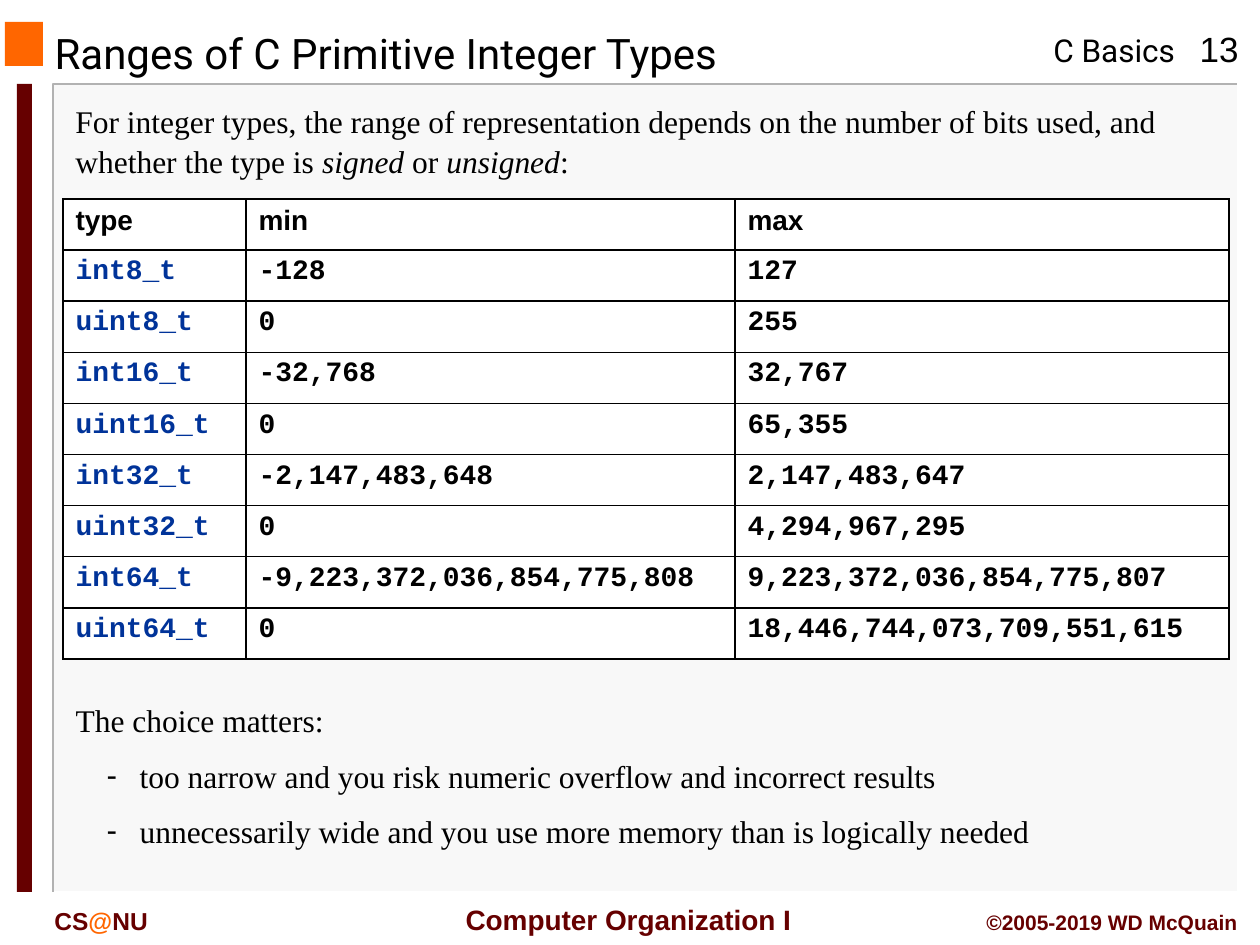
from lxml.etree import SubElement
from pptx import Presentation
from pptx.dml.color import RGBColor
from pptx.enum.shapes import MSO_SHAPE
from pptx.enum.text import MSO_ANCHOR, MSO_AUTO_SIZE, PP_ALIGN
from pptx.oxml.ns import qn
from pptx.util import Pt

EMU_PER_PX = 914400 / 126
BLACK, WHITE, MAROON, ORANGE = "000000", "FFFFFF", "660000", "FF6600"
NAVY, PANEL, GRAY = "003399", "F8F8F8", "B2B2B2"

RANGES = [
    ("type", "min", "max"),
    ("int8_t", "-128", "127"),
    ("uint8_t", "0", "255"),
    ("int16_t", "-32,768", "32,767"),
    ("uint16_t", "0", "65,355"),
    ("int32_t", "-2,147,483,648", "2,147,483,647"),
    ("uint32_t", "0", "4,294,967,295"),
    ("int64_t", "-9,223,372,036,854,775,808", "9,223,372,036,854,775,807"),
    ("uint64_t", "0", "18,446,744,073,709,551,615"),
]


def px(length):
    return round(length * EMU_PER_PX)


def color(value):
    return RGBColor.from_string(value)


def place(shape, box):
    shape.left, shape.top, shape.width, shape.height = map(px, box)


def style(paragraph, size, name, hue=BLACK, bold=False):
    font = paragraph.font
    font.size, font.name, font.bold = Pt(size), name, bold
    font.color.rgb = color(hue)


def add_text(slide, box, runs, align=PP_ALIGN.LEFT, **look):
    text_box = slide.shapes.add_textbox(*map(px, box))
    text_box.text_frame.word_wrap = True
    paragraph = text_box.text_frame.paragraphs[0]
    paragraph.alignment = align
    style(paragraph, **look)
    added = []
    for text in runs:
        run = paragraph.add_run()
        run.text = text
        added.append(run)
    return paragraph, added


def add_rectangle(slide, box, fill):
    shape = slide.shapes.add_shape(MSO_SHAPE.RECTANGLE, *map(px, box))
    shape.shadow.inherit = False
    shape.fill.solid()
    shape.fill.fore_color.rgb = color(fill)
    shape.line.fill.background()


def add_edge(slide, points, hue):
    builder = slide.shapes.build_freeform(*points[0], scale=EMU_PER_PX)
    builder.add_line_segments(points[1:], close=False)
    shape = builder.convert_to_shape()
    shape.shadow.inherit = False
    shape.fill.background()
    shape.line.color.rgb = color(hue)
    shape.line.width = Pt(1)


def add_frame(slide, box):
    left, top, width, height = box
    right, bottom = left + width, top + height
    add_rectangle(slide, box, PANEL)
    add_edge(slide, [(right - 1, top), (left - 1, top), (left - 1, bottom)], GRAY)
    add_edge(slide, [(right, top), (right, bottom), (left, bottom)], WHITE)
    add_rectangle(slide, (left - 49, top - 62, 38, 44), ORANGE)
    add_rectangle(slide, (left - 37, top, 15, height), MAROON)


def add_header(slide, box):
    left, top, width, height = box
    title = slide.shapes.title
    place(title, (left, top + 8, 798, height - 6))
    frame = title.text_frame
    frame.auto_size = MSO_AUTO_SIZE.NONE
    frame.vertical_anchor = MSO_ANCHOR.MIDDLE
    frame.text = "Ranges of C Primitive Integer Types"
    frame.paragraphs[0].alignment = PP_ALIGN.LEFT
    style(frame.paragraphs[0], 24, "Roboto")
    right = left + width
    add_text(slide, (right - 220, top + 4, 150, 50), ["C Basics"], size=18, name="Roboto")
    add_text(slide, (right - 84, top, 84, 54), ["13"], PP_ALIGN.CENTER, size=20, name="Arial")


def add_footer(slide, box):
    left, top, width, height = box
    look = {"name": "Arial", "hue": MAROON, "bold": True}
    add_text(slide, (left + 403, top, 367, height), ["Computer Organization I"],
             PP_ALIGN.CENTER, size=16, **look)
    runs = add_text(slide, (left, top + 4, 189, 42), ["CS", "@", "NU"], size=14, **look)[1]
    runs[1].font.color.rgb = color(ORANGE)
    add_text(slide, (left + width - 315, top + 7, 315, 38), ["©2005-2019 WD McQuain"],
             PP_ALIGN.RIGHT, size=12, **look)


def add_introduction(slide, box):
    runs = [
        "For integer types, the range of representation depends on the number of bits used, "
        "and whether the type is ",
        "signed", " or ", "unsigned", ":",
    ]
    paragraph, added = add_text(slide, box, runs, size=18, name="Times New Roman")
    paragraph.line_spacing = 1.05
    for run in added[1::2]:
        run.font.italic = True


def add_borders(cell):
    properties = cell._tc.get_or_add_tcPr()
    for side in ("a:lnL", "a:lnR", "a:lnT", "a:lnB"):
        line = SubElement(properties, qn(side), w=str(Pt(1)))
        SubElement(SubElement(line, qn("a:solidFill")), qn("a:srgbClr"), val=BLACK)


def add_range_table(slide, box):
    frame = slide.shapes.add_table(len(RANGES), len(RANGES[0]), *map(px, box))
    table = frame.table
    table.first_row = table.horz_banding = False
    for column, width in zip(table.columns, (183, 489, 494)):
        column.width = px(width)
    for row_index, values in enumerate(RANGES):
        table.rows[row_index].height = px(box[3] / len(RANGES))
        for column_index, value in enumerate(values):
            cell = table.cell(row_index, column_index)
            add_borders(cell)
            cell.fill.solid()
            cell.fill.fore_color.rgb = color(WHITE)
            cell.text = value
            name = "Courier New" if row_index else "Arial"
            hue = NAVY if row_index and column_index == 0 else BLACK
            style(cell.text_frame.paragraphs[0], 16, name, hue, True)


def add_conclusion(slide, box):
    body = slide.placeholders[1]
    body.element.getparent().append(body.element)
    place(body, box)
    frame = body.text_frame
    frame.auto_size = MSO_AUTO_SIZE.NONE
    frame.text = "\n".join([
        "The choice matters:",
        "too narrow and you risk numeric overflow and incorrect results",
        "unnecessarily wide and you use more memory than is logically needed",
    ])
    for index, paragraph in enumerate(frame.paragraphs):
        properties = paragraph._p.get_or_add_pPr()
        properties.set("marL", str(px(64) if index else 0))
        properties.set("indent", str(px(-33) if index else 0))
        if index:
            SubElement(properties, qn("a:buChar"), char="-")
        else:
            SubElement(properties, qn("a:buNone"))
        paragraph.line_spacing = 1.05
        paragraph.space_before = Pt(9 if index else 0)
        style(paragraph, 18, "Times New Roman")


def main():
    presentation = Presentation()
    presentation.slide_width, presentation.slide_height = px(1260), px(945)
    slide = presentation.slides.add_slide(presentation.slide_layouts[1])
    add_frame(slide, (54, 84, 1184, 808))
    add_header(slide, (42, 21, 1219, 54))
    add_footer(slide, (42, 896, 1208, 46))
    add_introduction(slide, (63, 94, 1166, 90))
    add_range_table(slide, (63, 199, 1166, 460))
    add_conclusion(slide, (63, 693, 1166, 165))
    presentation.save("out.pptx")


if __name__ == "__main__":
    main()
